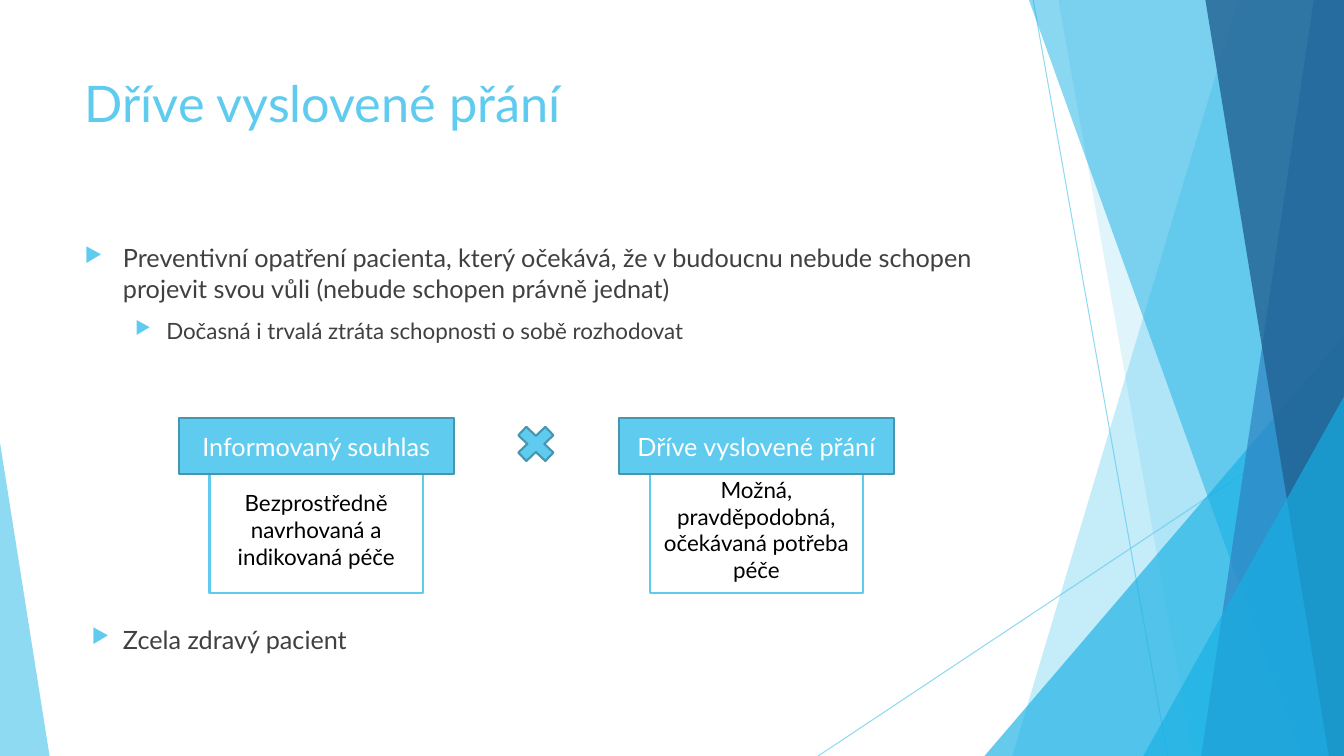
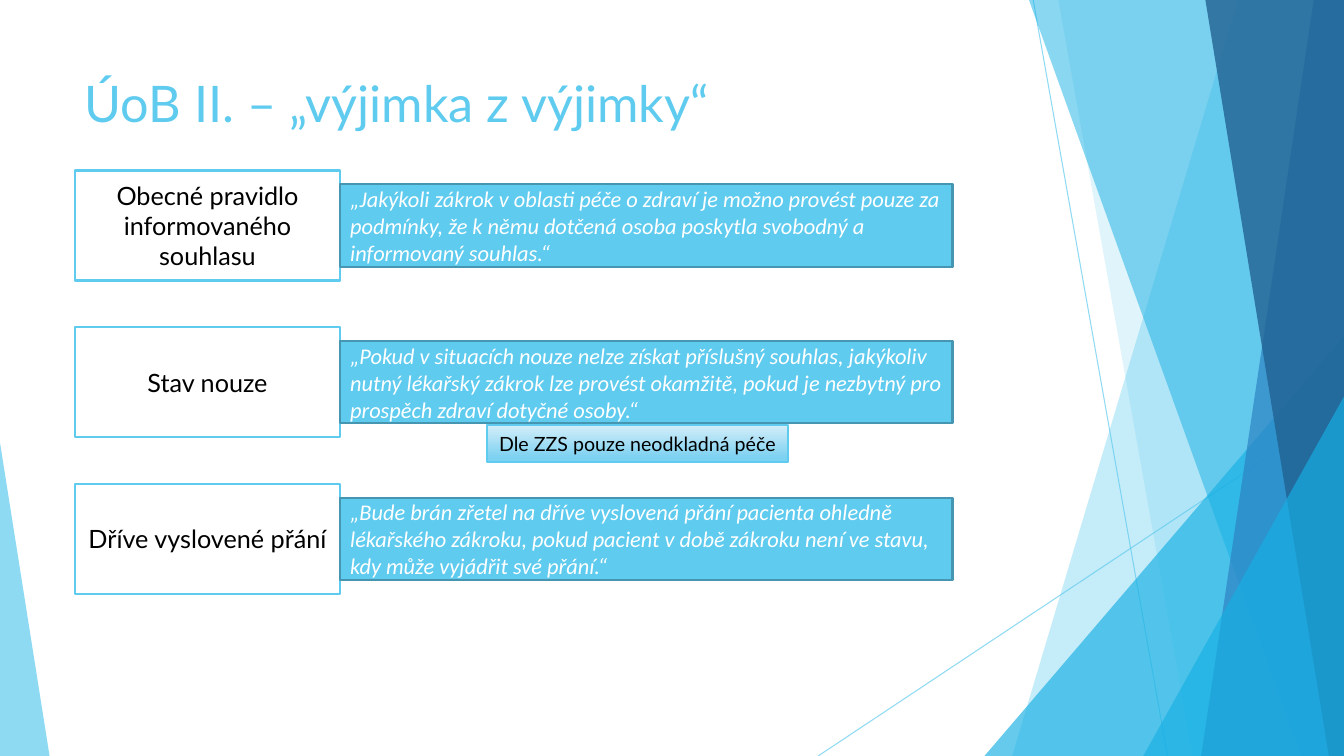
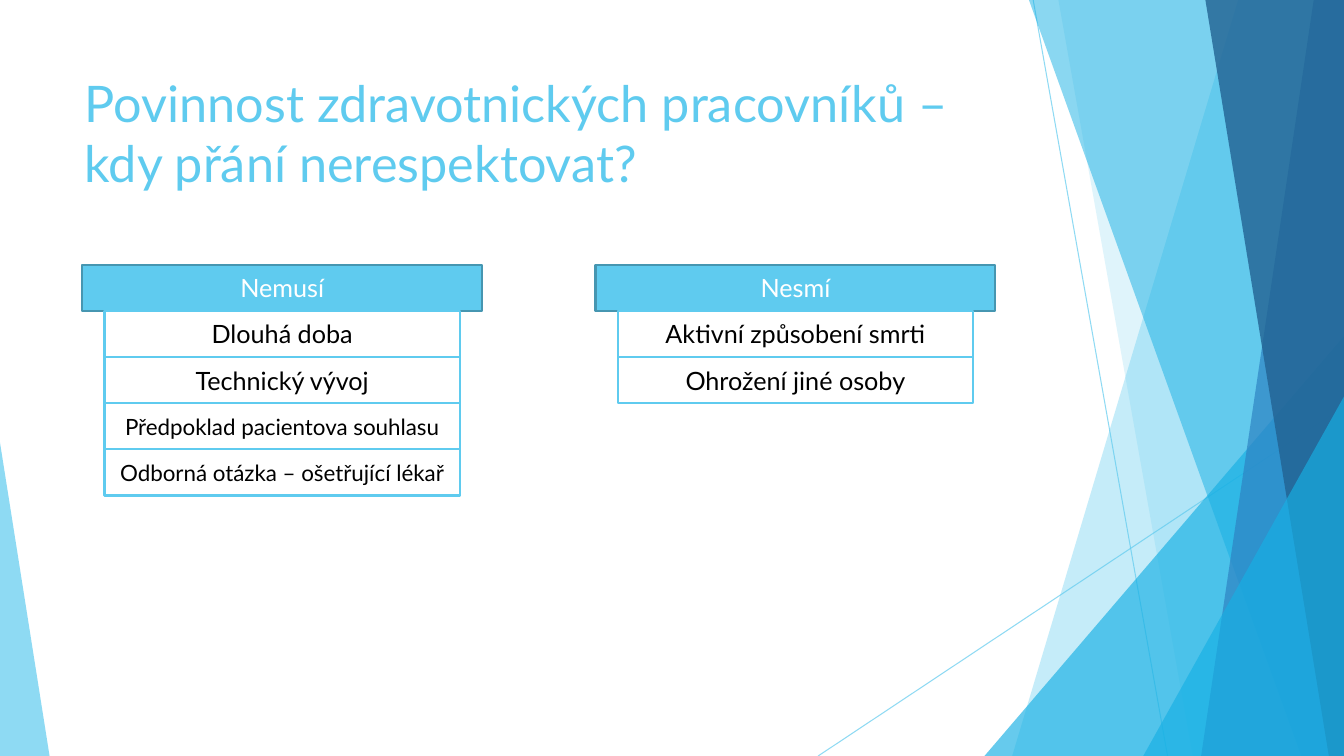
from lxml.etree import SubElement
from pptx import Presentation
from pptx.dml.color import RGBColor
from pptx.enum.shapes import MSO_CONNECTOR, MSO_SHAPE
from pptx.enum.text import MSO_ANCHOR, PP_ALIGN
from pptx.oxml.ns import qn
from pptx.util import Inches, Pt

# Grid of square cells covering the slide
COLS, ROWS = 160, 90
CELL = Inches(7.5) / ROWS

COLORS = {
    "sky": "5FCBEF", "sky_edge": "4696B1", "azure": "17B0E4",
    "blue": "2E83C3", "navy": "226292", "white": "FFFFFF",
    "black": "000000", "body": "404040",
    "note_top": "D4EEF9", "note_bottom": "7DD1F1",
}
FONT, QUOTE_FONT = "Lato", "Calibri"

# Ribbons: top-left column, bottom-left column, colour, opacity
BACK_RIBBONS = [(147.4, 120.5, "sky", 36), (126, 142, "sky", 20)]
FRONT_RIBBONS = [(122.5, 154.9, "azure", 50), (156.4, 143, "blue", 70),
                 (143.5, 158.2, "navy", 80)]
TITLE_BOX = (8.9, 8, 112.8, 17.3)


def cells(*values):
    return [round(value * CELL) for value in values]


def rgb(name):
    return RGBColor.from_string(COLORS[name])


def set_opacity(part, percent):
    for color in part._element.spPr.iter(qn("a:srgbClr")):
        SubElement(color, qn("a:alpha"), val=str(percent * 1000))


def paint(part, fill, line=None, width=1.5):
    part.shadow.inherit = False
    part.fill.solid()
    part.fill.fore_color.rgb = rgb(fill)
    if line:
        part.line.color.rgb = rgb(line)
        part.line.width = Pt(width)
    else:
        part.line.fill.background()


def write(frame, text, size=18, color="black", font=FONT, align=PP_ALIGN.CENTER,
          anchor=MSO_ANCHOR.MIDDLE, italic=False, first=True):
    """Write one formatted paragraph and return it."""
    frame.word_wrap = True
    frame.vertical_anchor = anchor
    paragraph = frame.paragraphs[0] if first else frame.add_paragraph()
    paragraph.alignment = align
    run = paragraph.add_run()
    run.text = text
    run.font.name, run.font.size = font, Pt(size)
    run.font.italic = italic
    run.font.color.rgb = rgb(color)
    return paragraph


def panel(slide, box, text, fill="white", line="sky", **text_format):
    part = slide.shapes.add_shape(MSO_SHAPE.RECTANGLE, *cells(*box))
    paint(part, fill, line)
    write(part.text_frame, text, **text_format)
    return part


def header(slide, box, text, **text_format):
    return panel(slide, box, text, fill="sky", line="sky_edge", color="white", **text_format)


# Shared decoration and title
def ray(slide, start, end):
    line = slide.shapes.add_connector(MSO_CONNECTOR.STRAIGHT, *cells(*start, *end))
    line.line.color.rgb = rgb("sky")
    line.line.width = Pt(0.75)
    SubElement(line._element.spPr, qn("a:effectLst"))
    set_opacity(line, 70)


def ribbon(slide, top, bottom, color, opacity):
    outline = slide.shapes.build_freeform(*cells(top, 0))
    corners = [(COLS, 0), (COLS, ROWS), (bottom, ROWS)]
    outline.add_line_segments([cells(*corner) for corner in corners], close=True)
    part = outline.convert_to_shape()
    paint(part, color)
    set_opacity(part, opacity)


def wedge(slide, left, top, width, apex, color, opacity):
    part = slide.shapes.add_shape(MSO_SHAPE.ISOSCELES_TRIANGLE,
                                  *cells(left, top, width, ROWS - top))
    part.adjustments[0] = apex
    paint(part, color)
    set_opacity(part, opacity)


def base_slide(deck, title):
    slide = deck.slides.add_slide(deck.slide_layouts[6])
    ray(slide, (123, 0), (139, ROWS))
    ray(slide, (COLS, 48.4), (97.4, ROWS))
    for band in BACK_RIBBONS:
        ribbon(slide, *band)
    wedge(slide, 117.2, 40, 42.8, 1, "azure", 66)
    for band in FRONT_RIBBONS:
        ribbon(slide, *band)
    wedge(slide, 136.1, 47.2, 23.9, 1, "azure", 66)
    wedge(slide, 0, 52.7, 5.9, 0, "sky", 70)
    heading = slide.shapes.add_textbox(*cells(*TITLE_BOX))
    write(heading.text_frame, title, size=36, color="sky",
          align=PP_ALIGN.LEFT, anchor=MSO_ANCHOR.TOP)
    return slide


# Bulleted text: items are (text, size, left indent, hanging indent)
def bullet_list(slide, box, items):
    frame = slide.shapes.add_textbox(*cells(*box)).text_frame
    for index, (text, size, indent, hang) in enumerate(items):
        paragraph = write(frame, text, size=size, color="body", align=PP_ALIGN.LEFT,
                          anchor=MSO_ANCHOR.TOP, first=index == 0)
        paragraph.space_before = Pt(10)
        props = paragraph._p.get_or_add_pPr()
        props.set("marL", str(Inches(indent)))
        props.set("indent", str(-Inches(hang)))
        bullet_color = SubElement(props, qn("a:buClr"))
        SubElement(bullet_color, qn("a:srgbClr"), val=COLORS["sky"])
        SubElement(props, qn("a:buSzPct"), val="80000")
        SubElement(props, qn("a:buChar"), char="▶")


# Heading bar overlapping a centred card
def concept(slide, box, name, detail):
    left, top, width, height = box
    bar_height, card_width, card_height = 6.6, 25.4, 15.1
    card = (left + (width - card_width) / 2, top + height - card_height,
            card_width, card_height)
    panel(slide, card, detail, size=16)
    header(slide, (left, top, width, bar_height), name)


# Label with a quotation beside it
def rule_row(slide, box, label, quote):
    left, top, width, height = box
    label_width, quote_height = 31.6, 9.8
    panel(slide, (left, top, label_width, height), label)
    header(slide, (left + label_width, top + (height - quote_height) / 2,
                   width - label_width, quote_height),
           quote, size=16, font=QUOTE_FONT, italic=True, align=PP_ALIGN.LEFT)


# Heading bar with a stack of reasons, each (text, size)
def reason_stack(slide, box, name, reasons):
    left, top, width, row = box
    inset = 2.65
    header(slide, (left, top, width, row), name)
    for index, (reason, size) in enumerate(reasons, 1):
        panel(slide, (left + inset, top + index * row, width - 2 * inset, row),
              reason, size=size)


def wish_slide(deck):
    slide = base_slide(deck, "Dříve vyslovené přání")
    bullet_list(slide, (8.9, 28.3, 112.8, 14), [
        ("Preventivní opatření pacienta, který očekává, že v budoucnu nebude schopen "
         "projevit svou vůli (nebude schopen právně jednat)", 18, 0.38, 0.38),
        ("Dočasná i trvalá ztráta schopnosti o sobě rozhodovat", 16, 0.81, 0.31),
    ])
    concept(slide, (21.3, 49.8, 32.7, 20.8), "Informovaný souhlas",
            "Bezprostředně navrhovaná a indikovaná péče")
    concept(slide, (73.7, 49.8, 32.7, 20.8), "Dříve vyslovené přání",
            "Možná, pravděpodobná, očekávaná potřeba péče")
    cross = slide.shapes.add_shape(MSO_SHAPE.MATH_MULTIPLY, *cells(60.7, 49.9, 6.2, 5.9))
    paint(cross, "sky", "sky_edge")
    bullet_list(slide, (8.9, 73.7, 112.8, 5), [("Zcela zdravý pacient", 18, 0.38, 0.31)])


def exception_slide(deck):
    slide = base_slide(deck, "ÚoB II. – „výjimka z výjimky“")
    note = panel(slide, (58, 50.6, 35.8, 4.4), "Dle ZZS pouze neodkladná péče", size=14)
    note.line.width = Pt(1)
    note.fill.gradient()
    note.fill.gradient_angle = 270
    stops = zip(note.fill.gradient_stops, ("note_top", "note_bottom"), (0, 0.88))
    for stop, color, position in stops:
        stop.color.rgb = rgb(color)
        stop.position = position
    rules = [
        ("Obecné pravidlo informovaného souhlasu",
         "„Jakýkoli zákrok v oblasti péče o zdraví je možno provést pouze za podmínky, "
         "že k němu dotčená osoba poskytla svobodný a informovaný souhlas.“"),
        ("Stav nouze",
         "„Pokud v situacích nouze nelze získat příslušný souhlas, jakýkoliv nutný "
         "lékařský zákrok lze provést okamžitě, pokud je nezbytný pro prospěch zdraví "
         "dotyčné osoby.“"),
        ("Dříve vyslovené přání",
         "„Bude brán zřetel na dříve vyslovená přání pacienta ohledně lékařského zákroku, "
         "pokud pacient v době zákroku není ve stavu, kdy může vyjádřit své přání.“"),
    ]
    for index, (label, quote) in enumerate(rules):
        rule_row(slide, (8.9, 20.3 + index * 18.65, 104.5, 13.1), label, quote)


def duty_slide(deck):
    slide = base_slide(deck, "Povinnost zdravotnických pracovníků – kdy přání nerespektovat?")
    reason_stack(slide, (9.8, 31.5, 47.6, 5.5), "Nemusí", [
        ("Dlouhá doba", 18), ("Technický vývoj", 18),
        ("Předpoklad pacientova souhlasu", 16), ("Odborná otázka – ošetřující lékař", 16),
    ])
    reason_stack(slide, (70.9, 31.5, 47.6, 5.5), "Nesmí", [
        ("Aktivní způsobení smrti", 18), ("Ohrožení jiné osoby", 18),
    ])


def main():
    deck = Presentation()
    deck.slide_width, deck.slide_height = cells(COLS, ROWS)
    wish_slide(deck)
    exception_slide(deck)
    duty_slide(deck)
    deck.save("out.pptx")


if __name__ == "__main__":
    main()
